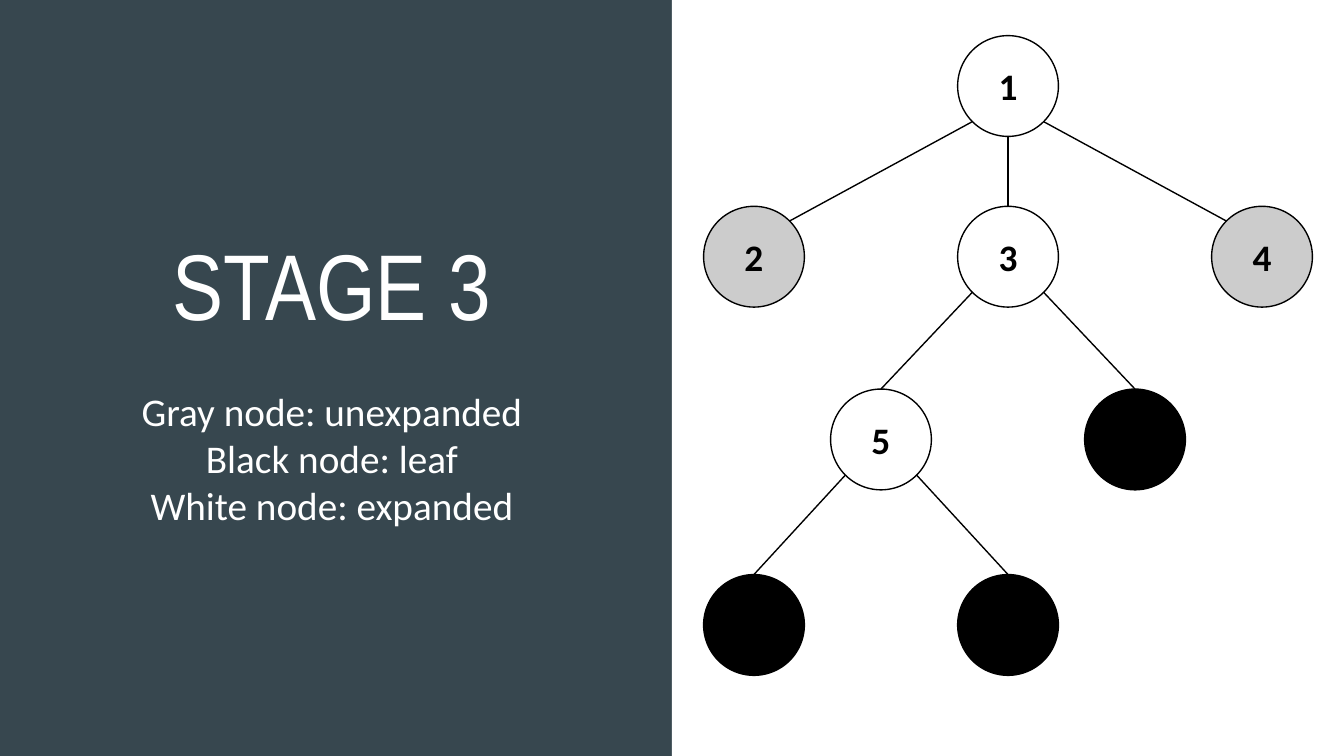
from math import cos, radians, sin

from lxml.etree import SubElement
from pptx import Presentation
from pptx.dml.color import RGBColor
from pptx.enum.shapes import MSO_CONNECTOR, MSO_SHAPE
from pptx.enum.text import MSO_ANCHOR, MSO_AUTO_SIZE, PP_ALIGN
from pptx.oxml.ns import qn
from pptx.util import Inches, Pt

SLATE, WHITE, GRAY, BLACK = "37474F", "FFFFFF", "CCCCCC", "000000"
PAGE_WIDTH = 10
PAGE_HEIGHT = PAGE_WIDTH * 9 / 16
DIAMETER = 0.75
CENTER_X, COLUMN_STEP = 7.5, 1.89 / 2
ROWS = [0.64, 1.91, 3.27, 4.65]

NODES = {
    "root": (0, 0, WHITE, "1"),
    "left": (-2, 1, GRAY, "2"),
    "middle": (0, 1, WHITE, "3"),
    "right": (2, 1, GRAY, "4"),
    "inner": (-1, 2, WHITE, "5"),
    "inner leaf": (1, 2, BLACK, ""),
    "left leaf": (-2, 3, BLACK, ""),
    "right leaf": (0, 3, BLACK, ""),
}

TOP, TOP_RIGHT, TOP_LEFT = -90, -45, -135
BOTTOM, BOTTOM_RIGHT, BOTTOM_LEFT = 90, 45, 135
EDGES = [
    ("root", BOTTOM_LEFT, "left", TOP_RIGHT),
    ("root", BOTTOM, "middle", TOP),
    ("root", BOTTOM_RIGHT, "right", TOP_LEFT),
    ("middle", BOTTOM_LEFT, "inner", TOP),
    ("middle", BOTTOM_RIGHT, "inner leaf", TOP),
    ("right leaf", TOP, "inner", BOTTOM_RIGHT),
    ("left leaf", TOP, "inner", BOTTOM_LEFT),
]


def color(value):
    return RGBColor.from_string(value)


def center(name):
    column, row = NODES[name][:2]
    return CENTER_X + column * COLUMN_STEP, ROWS[row]


def rim(name, angle):
    x, y = center(name)
    radius = DIAMETER / 2
    return x + radius * cos(radians(angle)), y + radius * sin(radians(angle))


class TreeSlide:
    heading_font = "Arial Narrow"
    body_font = "Calibri"
    line_width = Pt(0.75)

    def __init__(self, deck):
        self.page = deck.slides.add_slide(deck.slide_layouts[5])
        self.page.background.fill.solid()
        self.page.background.fill.fore_color.rgb = color(SLATE)

    def shape(self, kind, left, top, width, height, fill):
        shape = self.page.shapes.add_shape(
            kind, Inches(left), Inches(top), Inches(width), Inches(height))
        shape.shadow.inherit = False
        shape.fill.solid()
        shape.fill.fore_color.rgb = color(fill)
        return shape

    def panel(self, left, top, width, height):
        self.shape(MSO_SHAPE.RECTANGLE, left, top, width, height, WHITE).line.fill.background()

    def style(self, para, font, size, ink, bold=False):
        para.alignment = PP_ALIGN.CENTER
        for span in para.runs:
            span.font.name = font
            span.font.size = Pt(size)
            span.font.bold = bold
            span.font.color.rgb = color(ink)

    def inset(self, frame, anchor):
        frame.word_wrap = True
        frame.vertical_anchor = anchor
        frame.margin_left = frame.margin_right = Inches(0.1)
        frame.margin_top = frame.margin_bottom = Inches(0.1)

    def title(self, left, top, width, height, heading, legend):
        box = self.page.shapes.title
        box.left, box.top = Inches(left), Inches(top)
        box.width, box.height = Inches(width), Inches(height)
        frame = box.text_frame
        frame.text = "\n".join([heading, *legend])
        frame.auto_size = MSO_AUTO_SIZE.NONE
        self.inset(frame, MSO_ANCHOR.TOP)
        first, *others = frame.paragraphs
        self.style(first, self.heading_font, 50, WHITE)
        for para in others:
            self.style(para, self.body_font, 21, WHITE)
        others[0].space_before = Pt(26)

    def node(self, name):
        x, y = center(name)
        fill, label = NODES[name][2:]
        circle = self.shape(MSO_SHAPE.OVAL, x - DIAMETER / 2, y - DIAMETER / 2,
                            DIAMETER, DIAMETER, fill)
        circle.line.color.rgb = color(BLACK)
        circle.line.width = self.line_width
        if label:
            frame = circle.text_frame
            frame.text = label
            self.inset(frame, MSO_ANCHOR.MIDDLE)
            self.style(frame.paragraphs[0], self.body_font, 20, BLACK, bold=True)

    def edge(self, start, start_angle, end, end_angle):
        ends = rim(start, start_angle) + rim(end, end_angle)
        line = self.page.shapes.add_connector(
            MSO_CONNECTOR.STRAIGHT, *[Inches(value) for value in ends])
        line.line.color.rgb = color(BLACK)
        line.line.width = self.line_width
        SubElement(line._element.spPr, qn("a:effectLst"))


def main():
    deck = Presentation()
    deck.slide_width, deck.slide_height = Inches(PAGE_WIDTH), Inches(PAGE_HEIGHT)
    slide = TreeSlide(deck)
    slide.panel(PAGE_WIDTH / 2, 0, PAGE_WIDTH / 2, PAGE_HEIGHT)
    slide.title(0.26, 1.59, 4.42, 2.44, "STAGE 3", [
        "Gray node: unexpanded", "Black node: leaf", "White node: expanded"])
    for name in NODES:
        slide.node(name)
    for edge in EDGES:
        slide.edge(*edge)
    deck.save("out.pptx")


if __name__ == "__main__":
    main()
